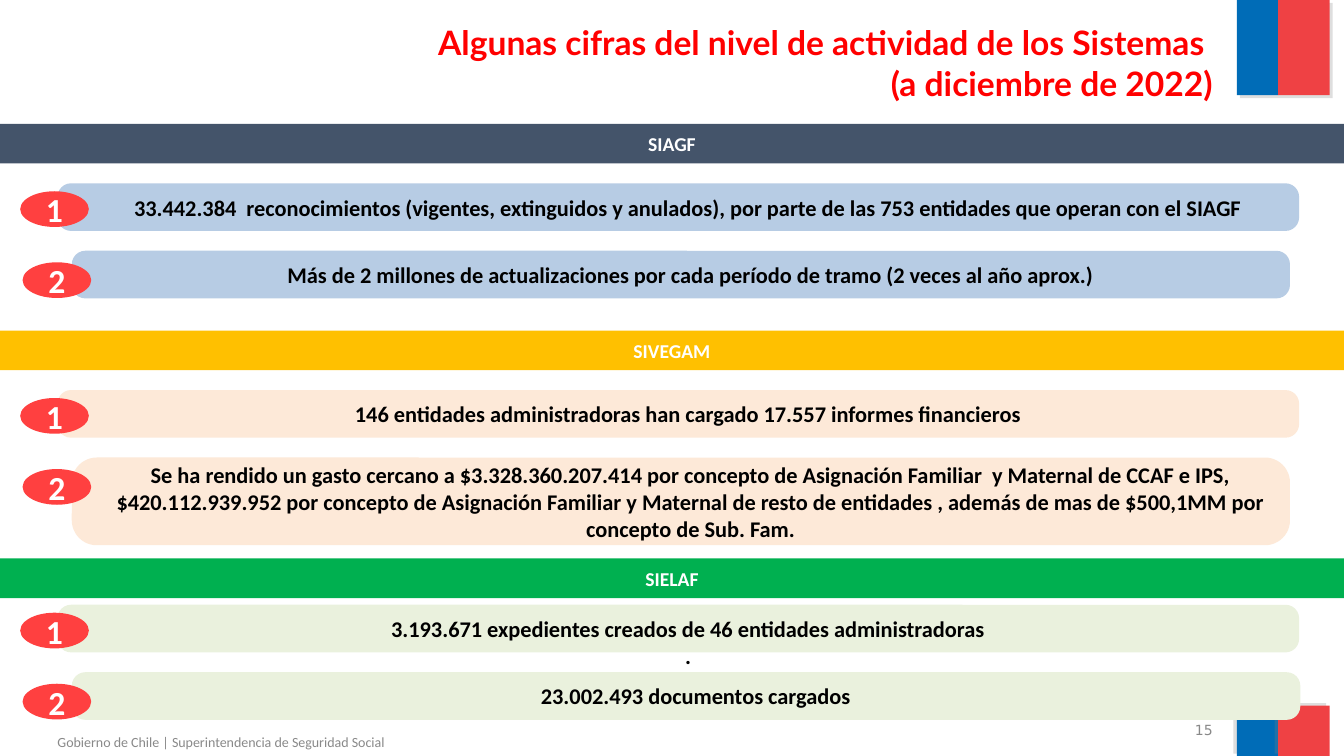
from dataclasses import dataclass

from lxml import etree
from pptx import Presentation
from pptx.dml import color
from pptx.enum import shapes, text
from pptx.oxml import ns
from pptx.util import Cm, Pt

SHAPE = shapes.MSO_SHAPE
ALIGN = text.PP_ALIGN
ANCHOR = text.MSO_ANCHOR


@dataclass(frozen=True)
class Theme:
    flag_blue: str = "006CB7"
    flag_red: str = "EF4144"
    shadow: str = "808080"
    title: str = "FF0000"
    badge: str = "FF4040"
    white: str = "FFFFFF"
    black: str = "000000"
    footer: str = "898989"
    title_size: int = 24
    band_size: int = 14
    row_size: int = 16
    badge_size: int = 24
    footer_size: int = 10


THEME = Theme()


@dataclass(frozen=True)
class Box:
    left: float
    top: float
    width: float
    height: float

    def lengths(self) -> tuple:
        return Cm(self.left), Cm(self.top), Cm(self.width), Cm(self.height)


@dataclass(frozen=True)
class TextStyle:
    size: int
    color: str
    name: str = "Calibri"
    bold: bool = True
    align: ALIGN = ALIGN.CENTER
    anchor: ANCHOR = ANCHOR.MIDDLE
    margin_left: float = 0.25
    margin_top: float = 0.13


@dataclass(frozen=True)
class Row:
    text: str
    left: float
    width: float
    height: float = 1.2
    margin_top: float = 0.13


@dataclass(frozen=True)
class System:
    name: str
    top: float
    band_color: str
    row_color: str
    first_row: float  # distance from the top of the band
    rows: tuple[Row, ...]


SYSTEMS = (
    System("SIAGF", 3.12, "44546A", "B7CCE4", 1.5, (
        Row("33.442.384  reconocimientos (vigentes, extinguidos y anulados), "
            "por parte de las 753 entidades que operan con el SIAGF", 1.45, 31.29),
        Row("Más de 2 millones de actualizaciones por cada período de tramo "
            "(2 veces al año aprox.)", 1.81, 30.7),
    )),
    System("SIVEGAM", 8.33, "FFC000", "FDE9D8", 1.5, (
        Row("146 entidades administradoras han cargado 17.557 informes financieros",
            1.45, 31.29),
        Row("Se ha rendido un gasto cercano a $3.328.360.207.414 por concepto de "
            "Asignación Familiar  y Maternal de CCAF e IPS, $420.112.939.952 por "
            "concepto de Asignación Familiar y Maternal de resto de entidades , "
            "además de mas de $500,1MM por concepto de Sub. Fam.", 1.81, 30.7, 2.21),
    )),
    System("SIELAF", 14.07, "00B050", "EAF1DD", 1.17, (
        # The larger top margin keeps the first line centred in the row
        Row("3.193.671 expedientes creados de 46 entidades administradoras\n.",
            1.45, 31.29, margin_top=0.81),
        Row("23.002.493 documentos cargados", 1.81, 30.96),
    )),
)
ROW_STEP = 1.7
BADGE_LEFTS = (0.51, 0.57)
BADGE_DROPS = (0.2, 0.29)


def write(shape, content: str, style: TextStyle) -> None:
    frame = shape.text_frame
    frame.text = content
    frame_format = {
        "word_wrap": True,
        "vertical_anchor": style.anchor,
        "margin_left": Cm(style.margin_left),
        "margin_right": Cm(0.25),
        "margin_top": Cm(style.margin_top),
        "margin_bottom": Cm(0.13),
    }
    for name, value in frame_format.items():
        setattr(frame, name, value)
    font_format = {"name": style.name, "size": Pt(style.size), "bold": style.bold}
    for paragraph in frame.paragraphs:
        paragraph.alignment = style.align
        for run in paragraph.runs:
            for name, value in font_format.items():
                setattr(run.font, name, value)
            run.font.color.rgb = color.RGBColor.from_string(style.color)


def add_filled(slide, kind: SHAPE, box: Box, fill: str):
    shape = slide.shapes.add_shape(kind, *box.lengths())
    shape.shadow.inherit = False
    shape.fill.solid()
    shape.fill.fore_color.rgb = color.RGBColor.from_string(fill)
    shape.line.fill.background()
    return shape


def add_label(slide, box: Box, content: str, style: TextStyle) -> None:
    write(slide.shapes.add_textbox(*box.lengths()), content, style)


def add_shadow(shape, angle: int) -> None:
    effects = shape._element.spPr.find(ns.qn("a:effectLst"))
    shadow = etree.SubElement(effects, ns.qn("a:outerShdw"), dist=str(Pt(3)),
                              dir=str(angle * 60000), algn="ctr", rotWithShape="0")
    tint = etree.SubElement(shadow, ns.qn("a:srgbClr"), val=THEME.shadow)
    etree.SubElement(tint, ns.qn("a:alpha"), val="25000")


def add_flag(slide, top: float, height: float, angle: int) -> None:
    for left, width, fill in ((31.17, 1.04, THEME.flag_blue),
                              (32.21, 1.3, THEME.flag_red)):
        add_shadow(add_filled(slide, SHAPE.RECTANGLE,
                              Box(left, top, width, height), fill), angle)


def add_system(slide, system: System) -> None:
    band = add_filled(slide, SHAPE.PENTAGON, Box(0, system.top, 33.87, 1),
                      system.band_color)
    band.adjustments[0] = 0
    write(band, system.name, TextStyle(THEME.band_size, THEME.white))

    for index, row in enumerate(system.rows):
        top = system.top + system.first_row + index * ROW_STEP
        bar = add_filled(slide, SHAPE.ROUNDED_RECTANGLE,
                         Box(row.left, top, row.width, row.height), system.row_color)
        bar.adjustments[0] = 0.285
        write(bar, row.text, TextStyle(THEME.row_size, THEME.black, margin_left=0.74,
                                       margin_top=row.margin_top))
        badge = add_filled(slide, SHAPE.OVAL,
                           Box(BADGE_LEFTS[index], top + BADGE_DROPS[index], 1.73, 0.9),
                           THEME.badge)
        write(badge, str(index + 1), TextStyle(THEME.badge_size, THEME.white))


def main() -> None:
    presentation = Presentation()
    presentation.slide_width, presentation.slide_height = Cm(33.87), Cm(19.05)
    slide = presentation.slides.add_slide(presentation.slide_layouts[6])

    # Flag blocks at the right corners
    add_flag(slide, 0, 2.4, 45)
    add_flag(slide, 17.78, 1.27, 215)

    # Title
    add_label(slide, Box(0.56, 0.43, 30.25, 3.17),
              "Algunas cifras del nivel de actividad de los Sistemas \n"
              "(a diciembre de 2022)",
              TextStyle(THEME.title_size, THEME.title, "Lato", align=ALIGN.RIGHT,
                        anchor=ANCHOR.TOP))

    # Bands with their numbered rows
    for system in SYSTEMS:
        add_system(slide, system)

    # Page number and footer
    for box, content, font in (
        (Box(22.91, 18.14, 7.9, 0.53), "15", "DejaVu Sans"),
        (Box(-0.3, 18.24, 10.24, 0.91),
         "Gobierno de Chile | Superintendencia de Seguridad Social", "Calibri"),
    ):
        add_label(slide, box, content, TextStyle(THEME.footer_size, THEME.footer, font,
                                                 bold=False, align=ALIGN.RIGHT))

    presentation.save("out.pptx")


if __name__ == "__main__":
    main()
